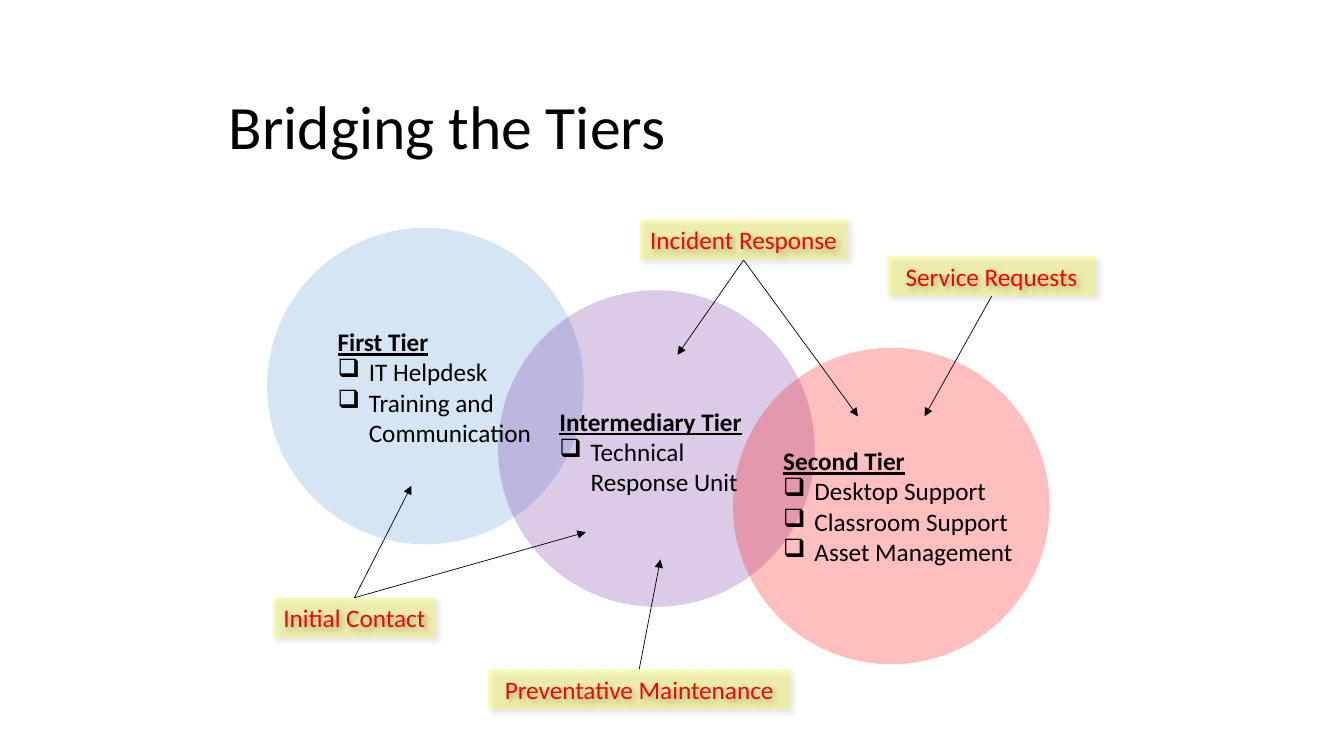
from dataclasses import dataclass

from lxml import etree
from pptx import Presentation
from pptx.dml.color import RGBColor
from pptx.enum.shapes import MSO_CONNECTOR, MSO_SHAPE
from pptx.enum.text import MSO_ANCHOR, MSO_AUTO_SIZE, PP_ALIGN
from pptx.oxml.ns import qn
from pptx.util import Inches, Pt

STRAIGHT = MSO_CONNECTOR.STRAIGHT
ELLIPSE, RECTANGLE = MSO_SHAPE.OVAL, MSO_SHAPE.RECTANGLE
MIDDLE, TOP = MSO_ANCHOR.MIDDLE, MSO_ANCHOR.TOP
LEFT, CENTER = PP_ALIGN.LEFT, PP_ALIGN.CENTER
NO_AUTOFIT = MSO_AUTO_SIZE.NONE
TITLE_ONLY = 5


@dataclass(frozen=True)
class Theme:
    font: str = "Calibri"
    title_size: float = 44
    body_size: float = 18
    ink: str = "000000"
    label_ink: str = "FF0000"
    label_fill: str = "FFFF00"
    first: str = "5B9BD5"
    intermediary: str = "7030A0"
    second: str = "FF0000"
    opacity: int = 25
    line_width: float = 0.5


THEME = Theme()
CIRCLE_SIZE = 3.14
LABEL_HEIGHT = 0.4
BULLET_INDENT = 0.31

CIRCLES = [
    (2.65, 2.26, THEME.first),
    (4.94, 2.88, THEME.intermediary),
    (7.27, 3.45, THEME.second),
]
TIERS = [
    ((3.25, 3.19, 2.2, 1.31), "First Tier", ["IT Helpdesk", "Training and\nCommunication"]),
    ((7.67, 4.37, 2.6, 1.31), "Second Tier",
     ["Desktop Support", "Classroom Support", "Asset Management"]),
    ((5.45, 3.98, 2.2, 1.01), "Intermediary Tier", ["Technical Response Unit"]),
]
LABELS = [
    ("Initial Contact", 2.71, 5.93, 1.61, [(4.08, 4.82), (5.81, 5.28)]),
    ("Preventative Maintenance", 4.84, 6.64, 3, [(6.55, 5.55)]),
    ("Incident Response", 6.34, 2.18, 2.07, [(6.72, 3.52), (8.51, 4.13)]),
    ("Service Requests", 8.8, 2.54, 2.07, [(9.17, 4.13)]),
]


def add_element(parent, tag, **attributes):
    element = etree.SubElement(parent, qn(tag))
    for name, value in attributes.items():
        element.set(name, str(value))
    return element


def write(paragraph, text, size=THEME.body_size, color=THEME.ink, bold=False,
          underline=False, align=LEFT, bullet=None, line_spacing=None):
    paragraph.alignment = align
    if line_spacing:
        paragraph.line_spacing = line_spacing
    if bullet:
        properties = paragraph._p.get_or_add_pPr()
        properties.set("marL", str(Inches(BULLET_INDENT)))
        properties.set("indent", str(-Inches(BULLET_INDENT)))
        add_element(properties, "a:buChar", char=bullet)
    for index, line in enumerate(text.split("\n")):
        if index:
            paragraph.add_line_break()
        run = paragraph.add_run()
        run.text = line
        run.font.name = THEME.font
        run.font.size = Pt(size)
        run.font.bold = bold
        run.font.underline = underline
        run.font.color.rgb = RGBColor.from_string(color)


def add_tinted_shape(slide, kind, box, color):
    shape = slide.shapes.add_shape(kind, *map(Inches, box))
    shape.fill.solid()
    shape.fill.fore_color.rgb = RGBColor.from_string(color)
    fill_color = shape._element.spPr.find(qn("a:solidFill"))[0]
    add_element(fill_color, "a:alpha", val=THEME.opacity * 1000)
    shape.line.fill.background()
    shape.shadow.inherit = False
    return shape


def add_title(slide, box, text):
    title = slide.shapes.title
    title.left, title.top, title.width, title.height = map(Inches, box)
    frame = title.text_frame
    frame.auto_size = NO_AUTOFIT
    frame.vertical_anchor = MIDDLE
    write(frame.paragraphs[0], text, size=THEME.title_size, line_spacing=0.9)


def add_tier(slide, box, heading, items):
    frame = slide.shapes.add_textbox(*map(Inches, box)).text_frame
    frame.word_wrap = True
    frame.vertical_anchor = TOP
    write(frame.paragraphs[0], heading, bold=True, underline=True)
    for item in items:
        write(frame.add_paragraph(), item, bullet="❑")


def add_label_shadow(shape):
    effects = shape._element.spPr.find(qn("a:effectLst"))
    shadow = add_element(effects, "a:outerShdw", blurRad=Pt(4), dist=Pt(3),
                         dir=45 * 60000, algn="tl", rotWithShape=0)
    shadow_color = add_element(shadow, "a:srgbClr", val=THEME.ink)
    add_element(shadow_color, "a:alpha", val=40000)


def add_arrow(slide, start, end):
    arrow = slide.shapes.add_connector(STRAIGHT, *map(Inches, (*start, *end)))
    arrow.line.color.rgb = RGBColor.from_string(THEME.ink)
    arrow.line.width = Pt(THEME.line_width)
    add_element(arrow.line._get_or_add_ln(), "a:tailEnd", type="triangle")
    add_element(arrow._element.spPr, "a:effectLst")


def add_label(slide, box, text, targets):
    left, top, width, height = box
    label = add_tinted_shape(slide, RECTANGLE, box, THEME.label_fill)
    add_label_shadow(label)
    frame = label.text_frame
    frame.word_wrap = False
    frame.vertical_anchor = TOP
    write(frame.paragraphs[0], text, color=THEME.label_ink, align=CENTER)
    for target in targets:
        edge = top if target[1] < top else top + height
        add_arrow(slide, (left + width / 2, edge), target)


def main():
    presentation = Presentation()
    presentation.slide_width = Inches(13.33)
    presentation.slide_height = Inches(7.5)
    slide = presentation.slides.add_slide(presentation.slide_layouts[TITLE_ONLY])
    add_title(slide, (2.17, 0.73, 7.16, 1.11), "Bridging the Tiers")
    for left, top, color in CIRCLES:
        add_tinted_shape(slide, ELLIPSE, (left, top, CIRCLE_SIZE, CIRCLE_SIZE), color)
    for box, heading, items in TIERS:
        add_tier(slide, box, heading, items)
    for text, left, top, width, targets in LABELS:
        add_label(slide, (left, top, width, LABEL_HEIGHT), text, targets)
    presentation.save("out.pptx")


if __name__ == "__main__":
    main()
